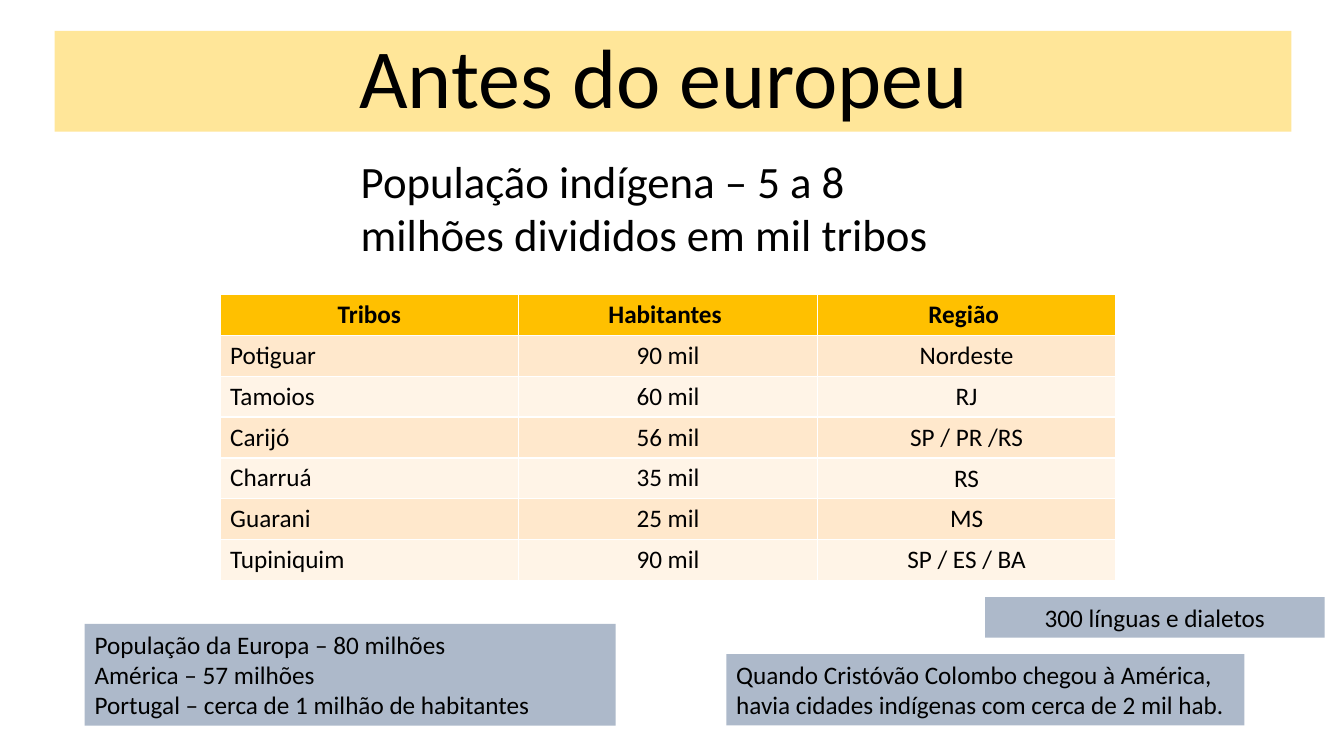
"""Build the slide on the indigenous population before the Europeans."""
from pptx import Presentation
from pptx.dml.color import RGBColor
from pptx.enum.text import MSO_ANCHOR as ANCHOR, MSO_AUTO_SIZE as AUTO, PP_ALIGN as ALIGN
from pptx.util import Pt


def paint(fill, color):
    fill.solid()
    fill.fore_color.rgb = RGBColor.from_string(color)


def write(tf, lines, size, align=ALIGN.LEFT, bold=False):
    tf.word_wrap = True
    for i, line in enumerate(lines):
        p = tf.add_paragraph() if i else tf.paragraphs[0]
        p.alignment = align
        r = p.add_run()
        r.text = line
        r.font.name = "Calibri"
        r.font.size = Pt(size)
        r.font.bold = bold
        r.font.color.rgb = RGBColor.from_string("000000")


prs = Presentation()
prs.slide_width, prs.slide_height = Pt(960), Pt(540)
s = prs.slides.add_slide(prs.slide_layouts[5])

title = s.shapes.title
title.left, title.top, title.width, title.height = Pt(39), Pt(22), Pt(883.5), Pt(72)
paint(title.fill, "FFE699")
tf = title.text_frame
tf.auto_size = AUTO.NONE
tf.vertical_anchor = ANCHOR.BOTTOM
write(tf, ["Antes do europeu "], 60, ALIGN.CENTER)
tf.paragraphs[0].line_spacing = 0.9

tribes = [
    ("Tribos", "Habitantes ", "Região "),
    ("Potiguar", "90 mil", "Nordeste"),
    ("Tamoios", "60 mil", "RJ"),
    ("Carijó", "56 mil", "SP / PR /RS"),
    ("Charruá", "35 mil", "RS"),
    ("Guarani", "25 mil", "MS"),
    ("Tupiniquim", "90 mil", "SP / ES / BA"),
]
table = s.shapes.add_table(len(tribes), 3, Pt(157.2), Pt(210.3), Pt(639.9), Pt(201.6)).table
for i, row in enumerate(tribes):
    for j, value in enumerate(row):
        cell = table.cell(i, j)
        header = i == 0
        paint(cell.fill, "FFC000" if header else "FFE8CC" if i % 2 else "FFF4E7")
        cell.vertical_anchor = ANCHOR.MIDDLE if header or j == 2 else ANCHOR.TOP
        align = ALIGN.CENTER if header or j else ALIGN.LEFT
        write(cell.text_frame, [value], 18, align, header)

boxes = [
    (250.6, 106, 453.6, 85, 32, None, ALIGN.LEFT,
     ["População indígena – 5 a 8 milhões divididos em mil tribos"]),
    (60.5, 445.6, 379.4, 72.7, 18, "ADB9CA", ALIGN.LEFT,
     ["População da Europa – 80 milhões", "América – 57 milhões",
      "Portugal – cerca de 1 milhão de habitantes"]),
    (518.8, 467.2, 370, 51, 18, "ADB9CA", ALIGN.LEFT,
     ["Quando Cristóvão Colombo chegou à América, havia cidades indígenas com cerca de 2 mil hab."]),
    (703.7, 426.5, 242.6, 29, 18, "ADB9CA", ALIGN.CENTER, ["300 línguas e dialetos"]),
]
for x, y, w, h, size, color, align, lines in boxes:
    sp = s.shapes.add_textbox(Pt(x), Pt(y), Pt(w), Pt(h))
    if color:
        paint(sp.fill, color)
    write(sp.text_frame, lines, size, align)
    sp.text_frame.auto_size = AUTO.SHAPE_TO_FIT_TEXT

prs.save("out.pptx")
